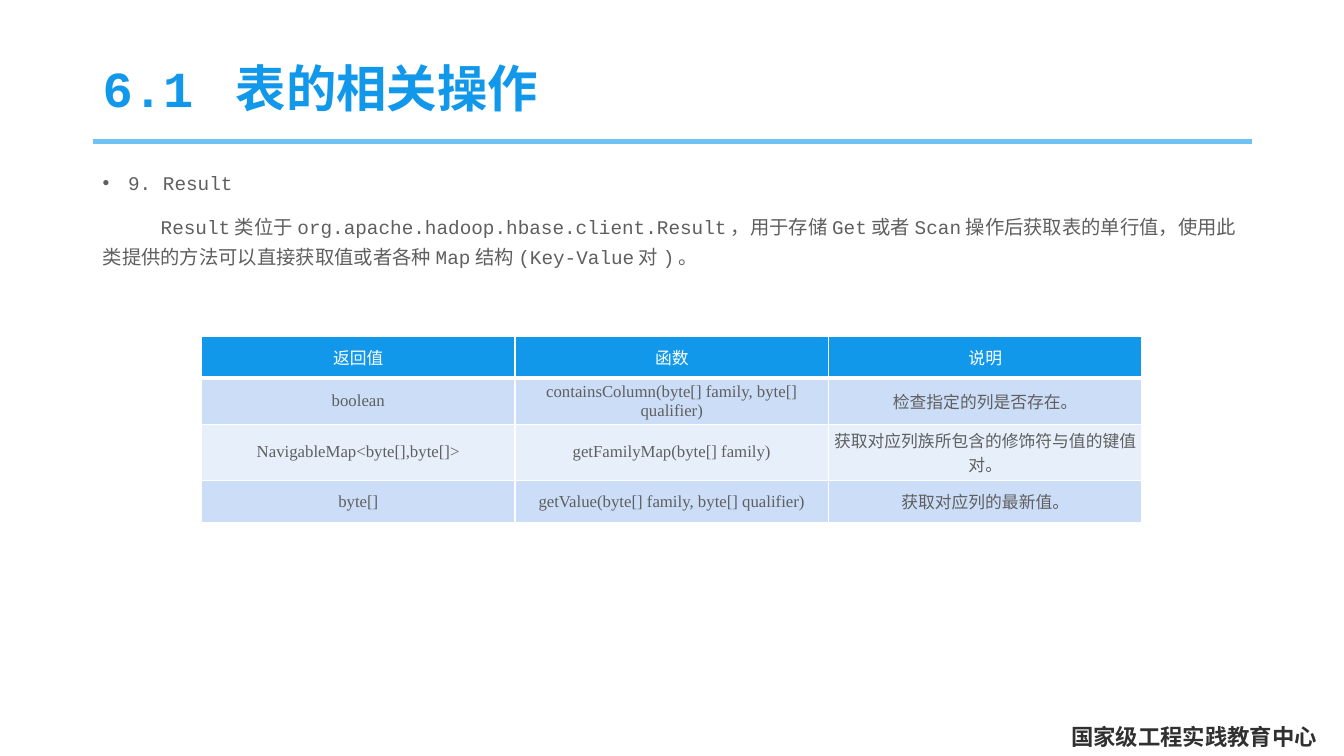
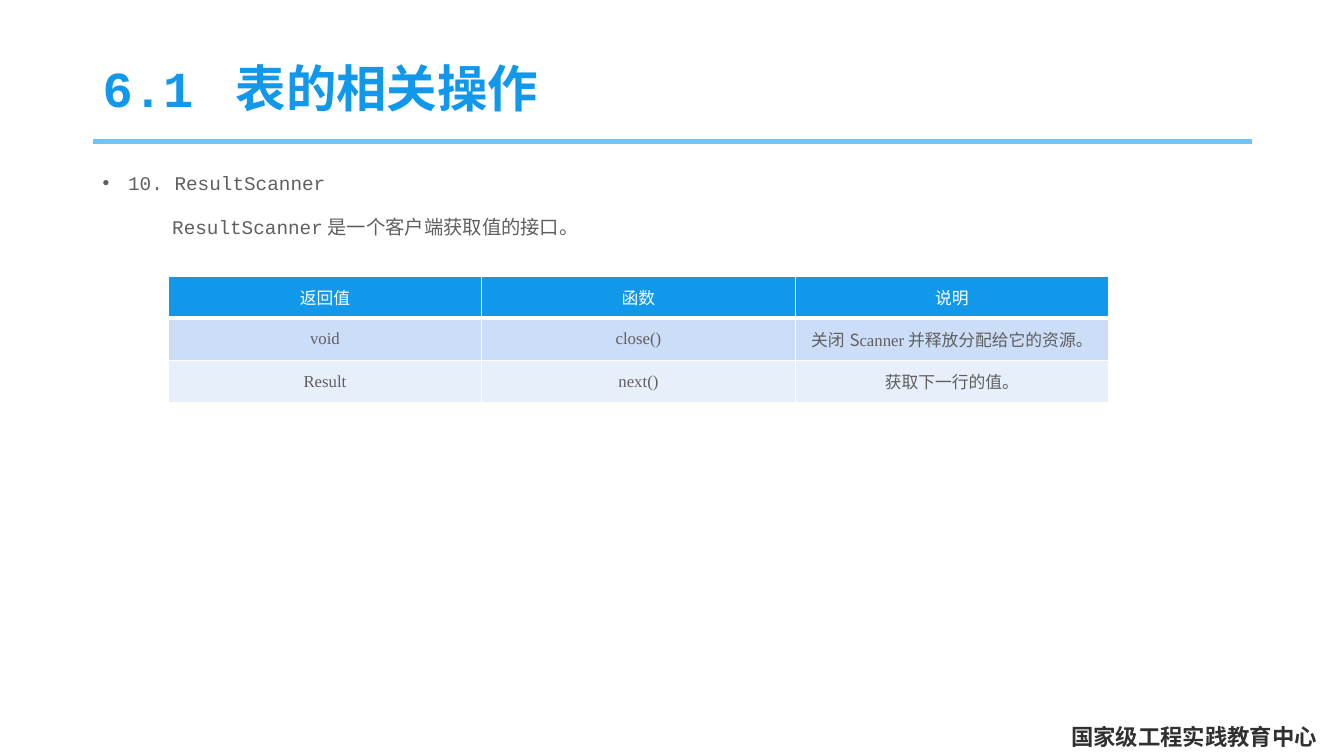
from lxml import etree
from pptx import Presentation
from pptx.dml.color import RGBColor
from pptx.enum.shapes import MSO_CONNECTOR
from pptx.enum.text import MSO_ANCHOR, PP_ALIGN
from pptx.oxml.ns import qn
from pptx.util import Cm, Pt

MIDDLE, BOTTOM, TOP = MSO_ANCHOR.MIDDLE, MSO_ANCHOR.BOTTOM, MSO_ANCHOR.TOP
CENTER, JUSTIFY, LEFT = PP_ALIGN.CENTER, PP_ALIGN.JUSTIFY, PP_ALIGN.LEFT
STRAIGHT = MSO_CONNECTOR.STRAIGHT


def color(value):
    return RGBColor.from_string(value)


class Deck:
    """Shared style and the slide being built."""

    MONO, SERIF, CJK = "Courier New", "Times New Roman", "Noto Sans CJK SC"
    BLUE, RULE, TEXT, DARK, WHITE = "1198EB", "6FC2F5", "5F5F5F", "303030", "FFFFFF"
    BANDS = ("CCDDF7", "E7EFFB")
    MARGIN, WIDTH = 2.34, 29.21
    COLUMN, ROW, TALL_ROW, INSET = 7.9, 1.06, 1.42, 0.07

    def __init__(self):
        self.presentation = Presentation()
        self.presentation.slide_width = Cm(33.87)
        self.presentation.slide_height = Cm(19.05)
        self.slide = None

    def add_slide(self, title):
        self.slide = self.presentation.slides.add_slide(
            self.presentation.slide_layouts[6])
        self.footer("国家级工程实践教育中心")
        self.rule()
        self.title(title)

    # Text
    def run(self, paragraph, text, size, font, fill, bold=False):
        run = paragraph.add_run()
        run.text = text
        run.font.size = Pt(size)
        run.font.name = font
        run.font.bold = bold
        run.font.color.rgb = color(fill)
        east_asian = etree.SubElement(run.font._element, qn("a:ea"))
        east_asian.set("typeface", self.CJK)

    def text_box(self, left, top, width, height, anchor):
        shape = self.slide.shapes.add_textbox(
            Cm(left), Cm(top), Cm(width), Cm(height))
        shape.text_frame.word_wrap = True
        shape.text_frame.vertical_anchor = anchor
        return shape.text_frame

    def footer(self, text):
        frame = self.text_box(26.75, 18.26, 6.83, 0.76, BOTTOM)
        paragraph = frame.paragraphs[0]
        paragraph.alignment = JUSTIFY
        self.run(paragraph, text, 16, self.MONO, self.DARK, bold=True)

    def title(self, text):
        frame = self.text_box(self.MARGIN, 1.02, self.WIDTH, 2.54, MIDDLE)
        paragraph = frame.paragraphs[0]
        paragraph.line_spacing = 0.9
        self.run(paragraph, text, 36, self.MONO, self.BLUE, bold=True)

    def body(self, heading, text, first_indent):
        frame = self.text_box(self.MARGIN, 4.01, self.WIDTH, 13.16, TOP)
        bullet, description = frame.paragraphs[0], frame.add_paragraph()
        properties = bullet._p.get_or_add_pPr()
        properties.set("marL", str(Cm(0.64)))
        properties.set("indent", str(-Cm(0.64)))
        etree.SubElement(properties, qn("a:buFont")).set("typeface", "Arial")
        etree.SubElement(properties, qn("a:buChar")).set("char", "•")
        description._p.get_or_add_pPr().set("indent", str(Cm(first_indent)))
        description.space_before = Pt(10)
        for paragraph, words in ((bullet, heading), (description, text)):
            paragraph.alignment = LEFT
            paragraph.line_spacing = 1.3
            self.run(paragraph, words, 13.8, self.MONO, self.TEXT)

    # Line below the title
    def rule(self):
        line = self.slide.shapes.add_connector(
            STRAIGHT, Cm(self.MARGIN), Cm(3.56),
            Cm(self.MARGIN + self.WIDTH), Cm(3.56))
        line.line.color.rgb = color(self.RULE)
        line.line.width = Pt(3.5)
        etree.SubElement(line._element.spPr, qn("a:effectLst"))

    # Table
    def border(self, cell, side, width):
        line = etree.SubElement(
            cell._tc.get_or_add_tcPr(), qn(f"a:ln{side}"), w=str(Pt(width)))
        fill = etree.SubElement(line, qn("a:solidFill"))
        etree.SubElement(fill, qn("a:srgbClr"), val=self.WHITE)

    def cell(self, cell, content, row):
        for side in "LRTB":
            under_header = (row, side) in ((0, "B"), (1, "T"))
            self.border(cell, side, 3 if under_header else 1)
        cell.fill.solid()
        cell.fill.fore_color.rgb = color(
            self.BANDS[(row - 1) % 2] if row else self.BLUE)
        cell.vertical_anchor = MIDDLE
        cell.margin_left = cell.margin_right = Cm(self.INSET)
        cell.margin_top = cell.margin_bottom = Cm(self.INSET)
        paragraph = cell.text_frame.paragraphs[0]
        paragraph.alignment = CENTER
        runs = [(content, self.SERIF)] if isinstance(content, str) else content
        for text, font in runs:
            self.run(paragraph, text, 12, font, self.TEXT if row else self.WHITE)

    def table(self, left, top, methods, tall_rows=()):
        rows = [("返回值", "函数", "说明"), *methods]
        heights = [self.TALL_ROW if row in tall_rows else self.ROW
                   for row in range(len(rows))]
        columns = len(rows[0])
        table = self.slide.shapes.add_table(
            len(rows), columns, Cm(left), Cm(top),
            Cm(columns * self.COLUMN), Cm(sum(heights))).table
        table.first_row = table.horz_banding = False
        for column in table.columns:
            column.width = Cm(self.COLUMN)
        for row, contents in enumerate(rows):
            table.rows[row].height = Cm(heights[row])
            for column, content in enumerate(contents):
                self.cell(table.cell(row, column), content, row)


def main():
    deck = Deck()
    title = "6.1 表的相关操作"

    # Result
    deck.add_slide(title)
    deck.body(
        "9. Result",
        "Result类位于org.apache.hadoop.hbase.client.Result，用于存储Get或者Scan"
        "操作后获取表的单行值，使用此类提供的方法可以直接获取值或者各种Map结构"
        "(Key-Value对)。", 1.46)
    deck.table(5.08, 8.47, [
        ("boolean", "containsColumn(byte[] family, byte[] qualifier)",
         "检查指定的列是否存在。"),
        ("NavigableMap<byte[],byte[]>", "getFamilyMap(byte[] family)",
         "获取对应列族所包含的修饰符与值的键值对。"),
        ("byte[]", "getValue(byte[] family, byte[] qualifier)",
         "获取对应列的最新值。"),
    ], tall_rows=(2,))

    # ResultScanner
    deck.add_slide(title)
    deck.body("10. ResultScanner", "ResultScanner是一个客户端获取值的接口。", 1.75)
    deck.table(4.24, 6.96, [
        ("void", "close()",
         [("关闭", Deck.SERIF), ("S", Deck.CJK),
          ("canner并释放分配给它的资源。", Deck.SERIF)]),
        ("Result", "next()", "获取下一行的值。"),
    ])

    deck.presentation.save("out.pptx")


if __name__ == "__main__":
    main()
